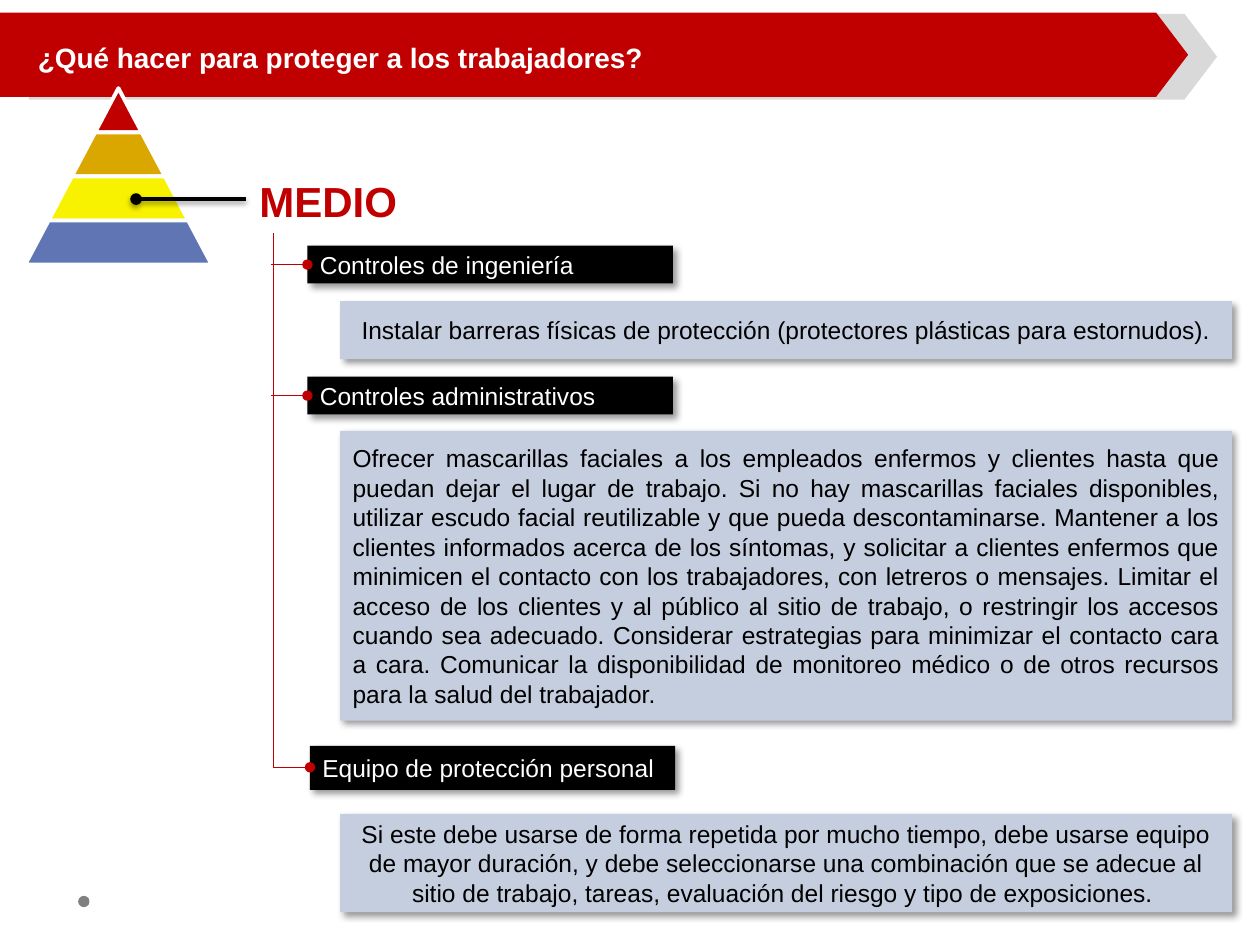
from dataclasses import dataclass

from lxml import etree
from pptx import Presentation
from pptx.dml.color import RGBColor
from pptx.enum.shapes import MSO_CONNECTOR, MSO_SHAPE
from pptx.enum.text import MSO_ANCHOR, PP_ALIGN
from pptx.oxml.ns import qn
from pptx.util import Inches, Pt

LINE, ELBOW = MSO_CONNECTOR.STRAIGHT, MSO_CONNECTOR.ELBOW
RECT, OVAL = MSO_SHAPE.RECTANGLE, MSO_SHAPE.OVAL
ARROW, TRAPEZOID = MSO_SHAPE.PENTAGON, MSO_SHAPE.TRAPEZOID
LEFT, CENTER, JUSTIFY = PP_ALIGN.LEFT, PP_ALIGN.CENTER, PP_ALIGN.JUSTIFY
TOP, MIDDLE = MSO_ANCHOR.TOP, MSO_ANCHOR.MIDDLE


@dataclass(frozen=True)
class Theme:
    font: str = "Arial"
    red: str = "C00000"
    gold: str = "DAA600"
    yellow: str = "F8F200"
    blue: str = "6076B4"
    pale: str = "C5CEDF"
    gray: str = "D9D9D9"
    dot: str = "808080"
    black: str = "000000"
    white: str = "FFFFFF"
    head: int = 24
    title: int = 16
    body: int = 14
    thick: float = 2.25
    thin: float = 0.75
    # opacity %, blur pt, distance pt, angle
    box_shade: tuple = (40, 4, 3, 45)
    line_shade: tuple = (38, 3.1, 1.6, 90)


def rgb(code):
    return RGBColor.from_string(code)


def write(shape, text, font, size, color, bold=False, align=LEFT, anchor=MIDDLE):
    frame = shape.text_frame
    frame.word_wrap = True
    frame.vertical_anchor = anchor
    par = frame.paragraphs[0]
    par.alignment = align
    run = par.add_run()
    run.text = text
    run.font.name = font
    run.font.size = Pt(size)
    run.font.bold = bold
    run.font.color.rgb = rgb(color)


def shade(item, look=None):
    """Replace the theme shadow with the given look, or with none."""
    effects = etree.SubElement(item.element.spPr, qn("a:effectLst"))
    if look:
        alpha, blur, dist, angle = look
        outer = etree.SubElement(
            effects, qn("a:outerShdw"), blurRad=str(Pt(blur)), dist=str(Pt(dist)),
            dir=str(angle * 60000), algn="tl", rotWithShape="0")
        color = etree.SubElement(outer, qn("a:srgbClr"), val="000000")
        etree.SubElement(color, qn("a:alpha"), val=str(alpha * 1000))


class Deck:
    def __init__(self, theme):
        self.theme = theme
        self.file = Presentation()
        self.file.slide_width, self.file.slide_height = Inches(10), Inches(7.5)
        self.slide = self.file.slides.add_slide(self.file.slide_layouts[5])

    def shape(self, kind, x, y, w, h, fill, adj=None, edge=None, look=None, home=None):
        owner = (home or self.slide).shapes
        item = owner.add_shape(kind, Inches(x), Inches(y), Inches(w), Inches(h))
        item.fill.solid()
        item.fill.fore_color.rgb = rgb(fill)
        if edge:
            item.line.color.rgb = rgb(edge)
            item.line.width = Pt(self.theme.thick)
        else:
            item.line.fill.background()
        if adj is not None:
            item.adjustments[0] = adj
        shade(item, look)
        return item

    def title(self, text, x, y, w, h):
        item = self.slide.shapes.title
        item.left, item.top, item.width, item.height = map(Inches, (x, y, w, h))
        write(item, text, self.theme.font, self.theme.title, self.theme.white,
              bold=True, anchor=TOP)
        # Bring the title in front of the banner
        item.element.getparent().append(item.element)

    def label(self, text, x, y, w, h):
        item = self.slide.shapes.add_textbox(Inches(x), Inches(y), Inches(w), Inches(h))
        write(item, text, self.theme.font, self.theme.head, self.theme.red,
              bold=True, align=JUSTIFY)

    def box(self, text, x, y, w, h, fill, color, align=JUSTIFY):
        item = self.shape(RECT, x, y, w, h, fill, look=self.theme.box_shade)
        write(item, text, self.theme.font, self.theme.body, color, align=align)
        return item

    def link(self, x1, y1, x2, y2, color, width, kind=LINE, look=None, goal=None):
        """Draw a line with a round tail, joined to the left side of goal."""
        item = self.slide.shapes.add_connector(
            kind, Inches(x1), Inches(y1), Inches(x2), Inches(y2))
        if goal is not None:
            item.end_connect(goal, 1)
        item.line.color.rgb = rgb(color)
        item.line.width = Pt(width)
        etree.SubElement(item.line._get_or_add_ln(), qn("a:tailEnd"), type="oval")
        shade(item, look)
        return item

    def elbow(self, x1, y1, x2, y2, color, width):
        """Draw a single bend that runs down first and then right."""
        item = self.link(x1, y1, x2, y2, color, width, kind=ELBOW)
        w, h = x2 - x1, y2 - y1
        item.left, item.top = Inches((x1 + x2 - h) / 2), Inches((y1 + y2 - w) / 2)
        item.width, item.height = Inches(h), Inches(w)
        props = item.element.spPr
        frame = props.find(qn("a:xfrm"))
        frame.set("rot", str(270 * 60000))
        frame.set("flipH", "1")
        props.find(qn("a:prstGeom")).set("prst", "bentConnector2")

    def pyramid(self, mid, top, step, rise, colors):
        group = self.slide.shapes.add_group_shape()
        for i, color in enumerate(colors):
            w = step * (i + 1)
            self.shape(TRAPEZOID, mid - w / 2, top + i * rise, w, rise, color,
                       adj=0.53, edge=self.theme.white, home=group)


TAGS = [
    ("Controles de ingeniería", 2.44, 1.95, 0.3),
    ("Controles administrativos", 2.44, 2.99, 0.3),
    ("Equipo de protección personal", 2.46, 5.92, 0.35),
]
NOTES = [
    ("Instalar barreras físicas de protección (protectores plásticas para "
     "estornudos).", 2.39, 0.46, CENTER),
    ("Ofrecer mascarillas faciales a los empleados enfermos y clientes hasta que "
     "puedan dejar el lugar de trabajo. Si no hay mascarillas faciales disponibles, "
     "utilizar escudo facial reutilizable y que pueda descontaminarse. Mantener a los "
     "clientes informados acerca de los síntomas, y solicitar a clientes enfermos que "
     "minimicen el contacto con los trabajadores, con letreros o mensajes. Limitar el "
     "acceso de los clientes y al público al sitio de trabajo, o restringir los accesos "
     "cuando sea adecuado. Considerar estrategias para minimizar el contacto cara a "
     "cara. Comunicar la disponibilidad de monitoreo médico o de otros recursos para la "
     "salud del trabajador.", 3.42, 2.3, JUSTIFY),
    ("Si este debe usarse de forma repetida por mucho tiempo, debe usarse equipo de "
     "mayor duración, y debe seleccionarse una combinación que se adecue al sitio de "
     "trabajo, tareas, evaluación del riesgo y tipo de exposiciones. ",
     6.46, 0.78, CENTER),
]


def main():
    look = Theme()
    deck = Deck(look)
    deck.shape(OVAL, 0.62, 7.11, 0.09, 0.09, look.dot)
    deck.shape(ARROW, 0.23, 0.11, 9.43, 0.68, look.gray, adj=0.38)
    deck.shape(ARROW, 0, 0.1, 9.43, 0.67, look.red, adj=0.38)
    deck.title("¿Qué hacer para proteger a los trabajadores?", 0.2, 0.27, 9.02, 0.37)

    deck.pyramid(0.94, 0.7, 0.37, 0.35, (look.red, look.gold, look.yellow, look.blue))
    deck.label("MEDIO", 1.96, 1.23, 3.39, 0.73)
    deck.link(1.95, 1.58, 1.08, 1.58, look.black, look.thick, look=look.line_shade)

    tags = [deck.box(text, x, y, 2.9, h, look.black, look.white)
            for text, x, y, h in TAGS]
    for text, y, h, align in NOTES:
        deck.box(text, 2.7, y, 7.08, h, look.pale, look.black, align)

    deck.elbow(2.17, 1.85, 2.46, 6.09, look.red, look.thin)
    for tag, (_, x, y, h) in zip(tags[:2], TAGS):
        mid = y + h / 2
        deck.link(2.15, mid, x, mid, look.red, look.thin, goal=tag)
    deck.file.save("out.pptx")


if __name__ == "__main__":
    main()
